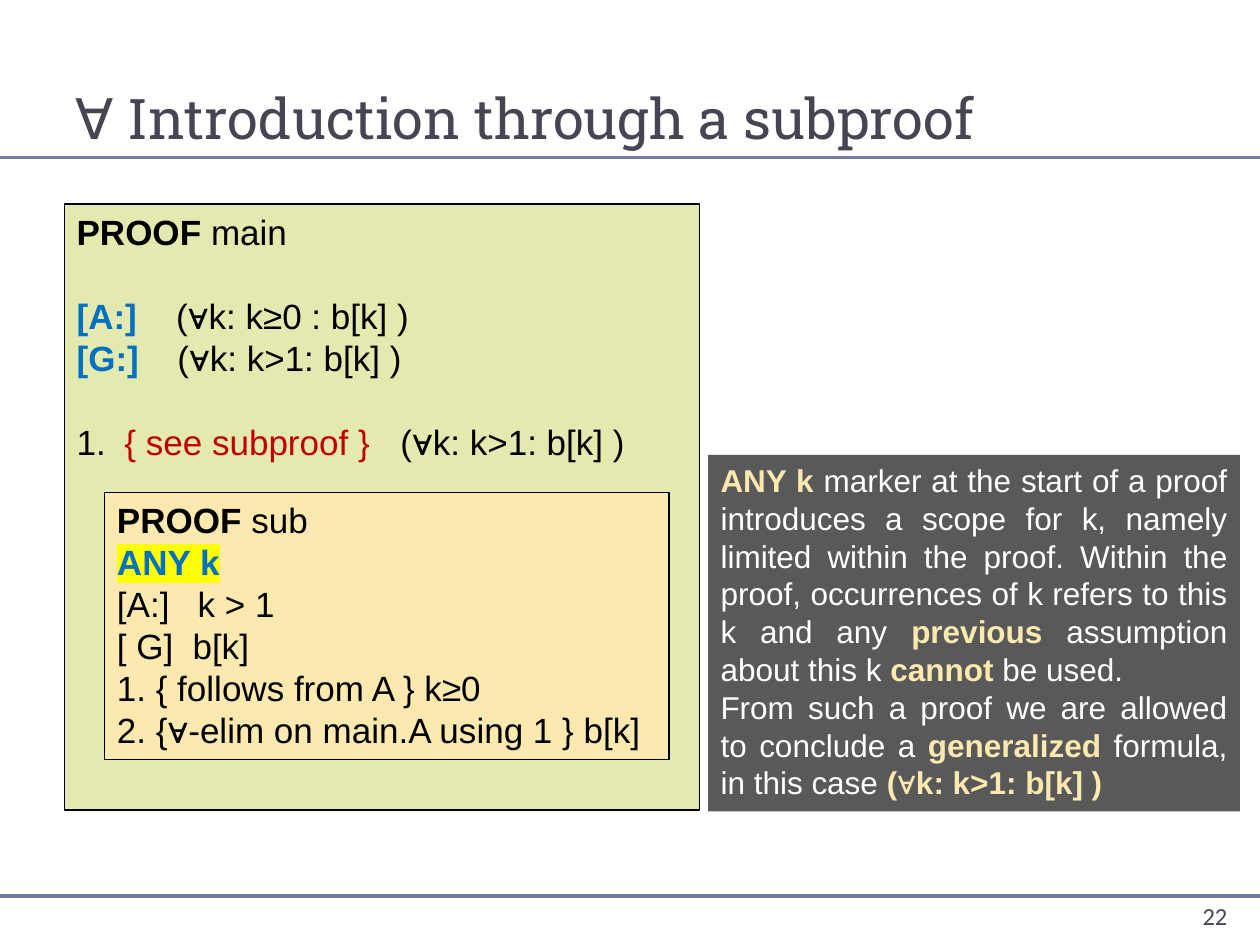
from lxml import etree
from pptx import Presentation
from pptx.dml.color import RGBColor
from pptx.enum import shapes, text
from pptx.oxml.ns import qn
from pptx.util import Inches, Pt

BLACK = RGBColor(0x00, 0x00, 0x00)
WHITE = RGBColor(0xFF, 0xFF, 0xFF)
BLUE = RGBColor(0x00, 0x70, 0xC0)
RED = RGBColor(0xC0, 0x00, 0x00)
SLATE = RGBColor(0x46, 0x46, 0x53)
RULE = RGBColor(0x72, 0x7C, 0xA3)
GREEN = RGBColor(0xE4, 0xE9, 0xAF)
CREAM = RGBColor(0xFC, 0xE9, 0xAF)
GREY = RGBColor(0x59, 0x59, 0x59)
YELLOW = RGBColor(0xFF, 0xFF, 0x00)

PLAIN = {"color": BLACK}
BOLD = {"color": BLACK, "bold": True}
LABEL = {"color": BLUE, "bold": True}
MARKER = {"color": BLUE, "bold": True, "highlight": YELLOW}
REASON = {"color": RED}
NOTE = {"color": WHITE}
KEY = {"color": CREAM, "bold": True}


def add_run(paragraph, words, size, color, bold=False, highlight=None, font="Arial"):
    run = paragraph.add_run()
    run.text = words
    for name, value in {"size": Pt(size), "bold": bold, "name": font}.items():
        setattr(run.font, name, value)
    run.font.color.rgb = color
    if highlight is not None:
        mark = etree.Element(qn("a:highlight"))
        etree.SubElement(mark, qn("a:srgbClr"), val=str(highlight))
        run._r.rPr.find(qn("a:solidFill")).addnext(mark)


def add_panel(box, fill, outlined, size, align, lines):
    """Add a filled box; each line is (space before, tab stops, runs)."""
    panel = slide.shapes.add_shape(
        shapes.MSO_SHAPE.RECTANGLE, *[Inches(v) for v in box])
    panel.shadow.inherit = False
    panel.fill.solid()
    panel.fill.fore_color.rgb = fill
    if outlined:
        panel.line.color.rgb = BLACK
        panel.line.width = Pt(0.75)
    else:
        panel.line.fill.background()
    frame = panel.text_frame
    frame.word_wrap = True
    frame.vertical_anchor = text.MSO_ANCHOR.TOP
    for i, (gap, stops, runs) in enumerate(lines):
        paragraph = frame.add_paragraph() if i else frame.paragraphs[0]
        paragraph.alignment = align
        paragraph.space_before = Pt(gap)
        if stops:
            tabs = etree.SubElement(paragraph._p.get_or_add_pPr(), qn("a:tabLst"))
            for stop in stops:
                etree.SubElement(tabs, qn("a:tab"), pos=str(Inches(stop)), algn="l")
        for words, style in runs:
            add_run(paragraph, words, size, **style)


prs = Presentation()
prs.slide_width, prs.slide_height = Inches(10), Inches(7.5)
slide = prs.slides.add_slide(prs.slide_layouts[5])

for y in (1.25, 7.11):
    rule = slide.shapes.add_connector(
        shapes.MSO_CONNECTOR.STRAIGHT, 0, Inches(y), Inches(10), Inches(y))
    rule.line.color.rgb = RULE
    rule.line.width = Pt(2.25)
    etree.SubElement(rule._element.spPr, qn("a:effectLst"))

title = slide.shapes.title
title.left, title.top, title.width, title.height = [
    Inches(v) for v in (0.5, 0.25, 9, 1)]
title.text_frame.vertical_anchor = text.MSO_ANCHOR.BOTTOM
title.text_frame.auto_size = text.MSO_AUTO_SIZE.NONE
heading = title.text_frame.paragraphs[0]
heading.alignment = text.PP_ALIGN.LEFT
add_run(heading, "∀ Introduction through a subproof", 32, SLATE, font="Roboto Slab")

number = slide.shapes.add_textbox(
    Inches(7.83), Inches(7.1), Inches(2.01), Inches(0.4)).text_frame
number.word_wrap = True
number.paragraphs[0].alignment = text.PP_ALIGN.RIGHT
add_run(number.paragraphs[0], "22", 14, SLATE, font="Calibri")

GOAL = "(∀k: k>1: b[k] )"
BLANK_LINE = 24

add_panel((0.51, 1.62, 5.04, 4.81), GREEN, True, 20, text.PP_ALIGN.LEFT, [
    (0, [], [("PROOF", BOLD), (" main", PLAIN)]),
    (BLANK_LINE, [0.79], [("[A:]\t", LABEL), ("(∀k: k≥0 : b[k] )", PLAIN)]),
    (0, [0.8], [("[G:]\t", LABEL), (GOAL, PLAIN)]),
    (BLANK_LINE, [0.38, 2.57],
     [("1.\t", PLAIN), ("{ see subproof }\t", REASON), (GOAL, PLAIN)]),
])

add_panel((0.83, 3.91, 4.48, 2.12), CREAM, True, 20, text.PP_ALIGN.LEFT, [
    (0, [], [("PROOF", BOLD), (" sub", PLAIN)]),
    (0, [], [("ANY k", MARKER)]),
    (0, [0.64], [("[A:]\tk > 1", PLAIN)]),
    (0, [0.6], [("[ G]\tb[k]", PLAIN)]),
    (0, [], [("1. { follows from A } k≥0", PLAIN)]),
    (0, [], [("2. {∀-elim on main.A using 1 } b[k]", PLAIN)]),
])

add_panel((5.62, 3.61, 4.22, 2.83), GREY, False, 18, text.PP_ALIGN.JUSTIFY, [
    (0, [], [
        ("ANY k ", KEY),
        ("marker at the start of a proof introduces a scope for k, namely "
         "limited within the proof. Within the proof, occurrences of k refers "
         "to this k and any ", NOTE),
        ("previous", KEY),
        (" assumption about this k ", NOTE),
        ("cannot", KEY),
        (" be used.", NOTE),
    ]),
    (0, [], [
        ("From such a proof we are allowed to conclude a ", NOTE),
        ("generalized", KEY),
        (" formula, in this case ", NOTE),
        (GOAL, KEY),
    ]),
])

prs.save("out.pptx")
